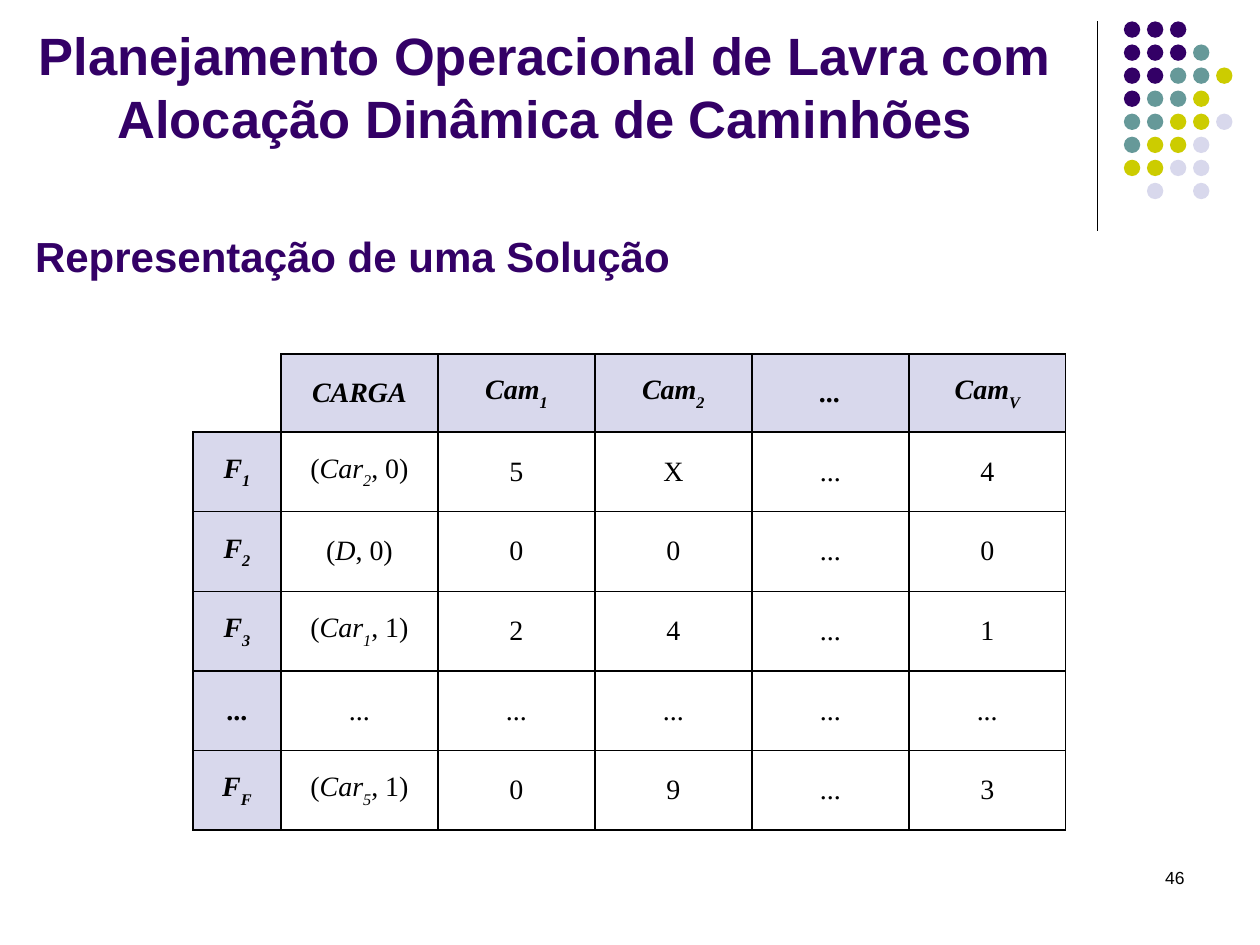
from lxml.etree import SubElement as Sub
from pptx import Presentation
from pptx.dml.color import RGBColor as Rgb
from pptx.enum.shapes import MSO_CONNECTOR as Conn, MSO_SHAPE as Shape
from pptx.enum.text import MSO_ANCHOR as Anchor, PP_ALIGN as Align
from pptx.oxml.ns import qn
from pptx.util import Inches, Pt

TITLE = "Planejamento Operacional de Lavra com Alocação Dinâmica de Caminhões"
TOPIC = "Representação de uma Solução"
PAGE = "46"

# "_" starts a subscript; a pair is a load: (name, status)
HEAD = ["CARGA", "Cam_1", "Cam_2", "...", "Cam_V"]
ROWS = [
    ("F_1", ("Car_2", 0), "5", "X", "...", "4"),
    ("F_2", ("D", 0), "0", "0", "...", "0"),
    ("F_3", ("Car_1", 1), "2", "4", "...", "1"),
    ("...", "...", "...", "...", "...", "..."),
    ("F_F", ("Car_5", 1), "0", "9", "...", "3"),
]

# One letter per dot: purple, teal, yellow, lilac
DOTS = ["PPP", "PPPT", "PPTTY", "PTTY", "TTYYL", "TYYL", "YYLL", " L L"]

THEME = {
    "P": "330066", "T": "669999", "Y": "CCCC00", "L": "D8D8EC",
    "ink": "000000", "sans": "Arial", "serif": "Times New Roman",
    "title": 30, "topic": 24, "cell": 16, "page": 10,
}

GRID = {"left": 1.53, "top": 2.81, "width": 6.93, "height": 3.78,
        "label": 0.7, "head": 0.62}
DOT = {"left": 8.92, "top": 0.17, "step": 0.183, "size": 0.13}


def tint(name):
    return Rgb.from_string(THEME[name])


def add_run(para, text, size, face="sans", ink="ink", bold=False,
            slant=False, sub=False):
    run = para.add_run()
    run.text = text
    font = run.font
    font.name, font.size = THEME[face], Pt(THEME[size])
    font.bold, font.italic = bold, slant
    font.color.rgb = tint(ink)
    if sub:
        run._r.get_or_add_rPr().set("baseline", "-30000")


def add_text(slide, box, text, size, align, **look):
    frame = slide.shapes.add_textbox(*map(Inches, box)).text_frame
    frame.word_wrap = True
    para = frame.paragraphs[0]
    para.alignment = align
    add_run(para, text, size, **look)


def add_dots(slide):
    for row, line in enumerate(DOTS):
        for col, code in enumerate(line):
            if code == " ":
                continue
            x = DOT["left"] + col * DOT["step"]
            y = DOT["top"] + row * DOT["step"]
            dot = slide.shapes.add_shape(
                Shape.OVAL, *map(Inches, (x, y, DOT["size"], DOT["size"])))
            dot.shadow.inherit = False
            dot.fill.solid()
            dot.fill.fore_color.rgb = tint(code)
            dot.line.fill.background()


def add_rule(slide):
    rule = slide.shapes.add_connector(
        Conn.STRAIGHT, *map(Inches, (8.71, 0.17, 8.71, 1.83)))
    rule.line.width = Pt(0.75)
    rule.line.color.rgb = tint("ink")
    Sub(rule._element.spPr, qn("a:effectLst"))


def set_edges(cell, shown):
    """Draw the named sides in ink and clear the others."""
    props = cell._tc.get_or_add_tcPr()
    for side in "LRTB":
        edge = Sub(props, qn("a:ln" + side), w=str(Pt(1)))
        if side in shown:
            fill = Sub(edge, qn("a:solidFill"))
            Sub(fill, qn("a:srgbClr"), val=THEME["ink"])
        else:
            Sub(edge, qn("a:noFill"))


def add_term(para, text, **look):
    base, _, sub = text.partition("_")
    add_run(para, base, "cell", "serif", **look)
    if sub:
        add_run(para, sub, "cell", "serif", sub=True, **look)


def fill_cell(cell, value, row, col):
    label = row == 0 or col == 0
    set_edges(cell, "LRTB" if value else "RB")
    if label and value:
        cell.fill.solid()
        cell.fill.fore_color.rgb = tint("L")
    else:
        cell.fill.background()
    cell.vertical_anchor = Anchor.MIDDLE
    para = cell.text_frame.paragraphs[0]
    para.alignment = Align.CENTER
    if isinstance(value, tuple):
        name, state = value
        add_term(para, "(")
        add_term(para, name, slant=True)
        add_term(para, f", {state})")
    elif value:
        slant = label and (row == 0 or value != "...")
        add_term(para, value, bold=label, slant=slant)


def add_grid(slide):
    data = [("", *HEAD), *ROWS]
    box = [Inches(GRID[key]) for key in ("left", "top", "width", "height")]
    table = slide.shapes.add_table(len(data), len(data[0]), *box).table
    table.first_row = table.horz_banding = False
    wide = (GRID["width"] - GRID["label"]) / len(HEAD)
    high = (GRID["height"] - GRID["head"]) / len(ROWS)
    for col, part in enumerate(table.columns):
        part.width = Inches(wide if col else GRID["label"])
    for row, part in enumerate(table.rows):
        part.height = Inches(high if row else GRID["head"])
        for col, value in enumerate(data[row]):
            fill_cell(table.cell(row, col), value, row, col)


def main():
    deck = Presentation()
    deck.slide_width, deck.slide_height = Inches(10), Inches(7.5)
    slide = deck.slides.add_slide(deck.slide_layouts[6])
    add_rule(slide)
    add_dots(slide)
    add_text(slide, (7.17, 6.83, 2.33, 0.5), PAGE, "page", Align.RIGHT)
    add_grid(slide)
    add_text(slide, (0.18, 1.78, 8.43, 0.63), TOPIC, "topic", Align.LEFT,
             ink="P", bold=True)
    add_text(slide, (0.2, 0.13, 8.25, 1.1), TITLE, "title", Align.CENTER,
             ink="P", bold=True)
    deck.save("out.pptx")


if __name__ == "__main__":
    main()
